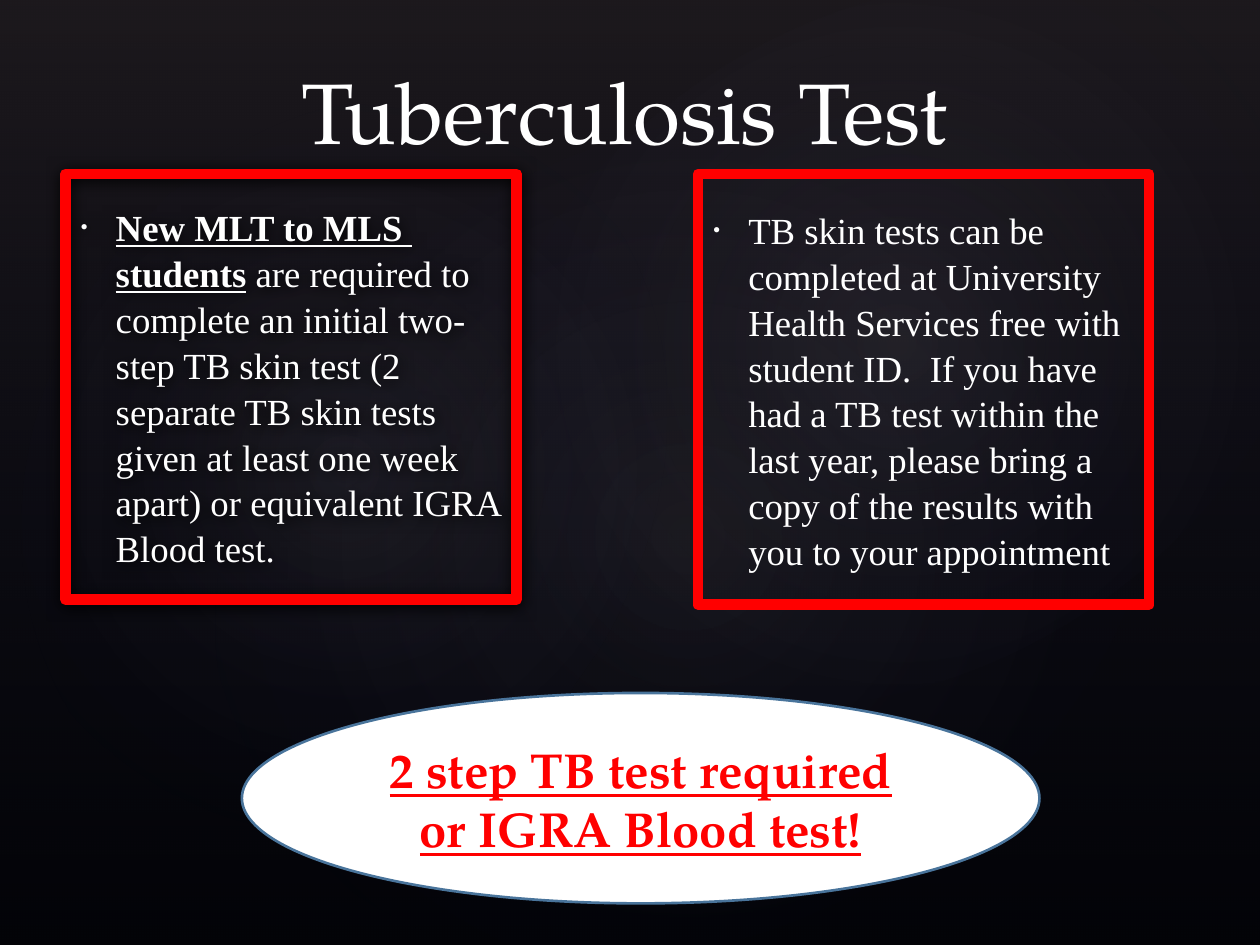
"""Build the Tuberculosis Test slide."""
from lxml import etree
from pptx import Presentation
from pptx.dml.color import RGBColor
from pptx.enum.shapes import MSO_SHAPE
from pptx.enum.text import MSO_ANCHOR, PP_ALIGN
from pptx.oxml import parse_xml
from pptx.oxml.ns import nsdecls, qn
from pptx.util import Inches, Pt

RECTANGLE, OVAL = MSO_SHAPE.RECTANGLE, MSO_SHAPE.OVAL
MIDDLE, BOTTOM = MSO_ANCHOR.MIDDLE, MSO_ANCHOR.BOTTOM
CENTER, LEFT = PP_ALIGN.CENTER, PP_ALIGN.LEFT
LINEAR = '<a:lin ang="5400000" scaled="0"/>'
RADIAL = ('<a:path path="circle"><a:fillToRect l="50000" t="50000" '
          'r="50000" b="50000"/></a:path>')


def color(value):
    return RGBColor.from_string(value)


def write(paragraph, text, font="Times New Roman", size=21, fill="FFFFFF",
          bold=False, underline=False):
    run = paragraph.add_run()
    run.text = text
    run.font.name = font
    run.font.size = Pt(size)
    run.font.color.rgb = color(fill)
    run.font.bold = bold
    run.font.underline = underline


class SlideBuilder:
    heading_font = "TeX Gyre Pagella"
    accent = "FF0000"

    def __init__(self, presentation):
        self.slide = presentation.slides.add_slide(presentation.slide_layouts[5])
        background = self.slide.background.fill
        background.solid()
        background.fore_color.rgb = color("000000")

    def shape(self, kind, box):
        shape = self.slide.shapes.add_shape(kind, *map(Inches, box))
        shape.shadow.inherit = False
        shape.fill.background()
        shape.line.fill.background()
        return shape

    def paragraph(self, shape, anchor, alignment):
        frame = shape.text_frame
        frame.word_wrap = True
        frame.vertical_anchor = anchor
        paragraph = frame.paragraphs[0]
        paragraph.alignment = alignment
        return paragraph

    def gradient(self, kind, box, stops, direction, rotation=0):
        shape = self.shape(kind, box)
        shape.rotation = rotation
        marks = "".join(
            f'<a:gs pos="{position * 1000}"><a:srgbClr val="{value}">'
            f'<a:alpha val="{alpha * 1000}"/></a:srgbClr></a:gs>'
            for position, value, alpha in stops)
        properties = shape.element.spPr
        properties.replace(properties.find(qn("a:noFill")), parse_xml(
            f'<a:gradFill {nsdecls("a")} rotWithShape="1">'
            f'<a:gsLst>{marks}</a:gsLst>{direction}</a:gradFill>'))

    def title(self, text, box):
        title = self.slide.shapes.title
        title.left, title.top, title.width, title.height = map(Inches, box)
        title.element.getparent().append(title.element)
        paragraph = self.paragraph(title, BOTTOM, CENTER)
        write(paragraph, text, font=self.heading_font, size=49)

    def framed_bullet(self, box, runs, shadow=False):
        shape = self.shape(RECTANGLE, box)
        shape.line.color.rgb = color(self.accent)
        shape.line.width = Pt(6)
        etree.SubElement(shape.line._get_or_add_ln(), qn("a:round"))
        if shadow:
            effects = shape.element.spPr.find(qn("a:effectLst"))
            effects.append(parse_xml(
                f'<a:outerShdw {nsdecls("a")} blurRad="{Pt(8.5)}" dist="{Pt(1)}" '
                'dir="5400000" rotWithShape="0"><a:srgbClr val="000000"/></a:outerShdw>'))
        paragraph = self.paragraph(shape, MIDDLE, LEFT)
        paragraph.line_spacing = 1.04
        paragraph.space_before = Pt(4)
        properties = paragraph._p.get_or_add_pPr()
        properties.set("marL", str(Inches(0.3)))
        properties.set("indent", str(Inches(-0.28)))
        etree.SubElement(properties, qn("a:buSzPct"), val="60000")
        etree.SubElement(properties, qn("a:buFont"), typeface="Times New Roman")
        etree.SubElement(properties, qn("a:buChar"), char="•")
        for text, style in runs:
            write(paragraph, text, **style)

    def callout(self, text, box):
        shape = self.shape(OVAL, box)
        shape.fill.solid()
        shape.fill.fore_color.rgb = color("FFFFFF")
        shape.line.color.rgb = color("49749B")
        shape.line.width = Pt(1.5)
        write(self.paragraph(shape, MIDDLE, CENTER), text, font=self.heading_font,
              size=28, fill=self.accent, bold=True, underline=True)


def main():
    presentation = Presentation()
    presentation.slide_width, presentation.slide_height = Inches(10), Inches(7.5)
    builder = SlideBuilder(presentation)
    builder.gradient(RECTANGLE, (0, 0, 10, 7.5),
                     [(0, "504652", 36), (100, "242852", 10)], LINEAR)
    glows = [((1.5, 1.14, 7.92, 6.24), 328.7, 7),
             ((-0.3, 1.28, 6.06, 4.9), 294.3, 8),
             ((3.58, 0.13, 7.09, 5.2), 328.7, 8)]
    for box, rotation, alpha in glows:
        builder.gradient(OVAL, box, [(0, "C4BCC6", alpha), (58, "242852", 0)],
                         RADIAL, rotation)
    builder.title("Tuberculosis Test", (0.83, 0.33, 8.25, 1))
    builder.framed_bullet((0.52, 1.38, 3.58, 3.38), [
        ("New MLT to MLS  students", {"bold": True, "underline": True}),
        (" ", {"bold": True}),
        ("are required to complete an initial two-step TB skin test "
         "(2 separate TB skin tests given at least one week apart) "
         "or equivalent IGRA Blood test. ", {}),
    ], shadow=True)
    builder.framed_bullet((5.54, 1.38, 3.58, 3.42), [
        ("TB skin tests can be completed at University Health Services free "
         "with student ID.  If you have had a TB test within the last year, "
         "please bring a copy of the results with you to your appointment", {}),
    ])
    builder.callout("2 step TB test required or IGRA Blood test!",
                    (1.92, 5.5, 6.33, 1.67))
    presentation.save("out.pptx")


if __name__ == "__main__":
    main()
